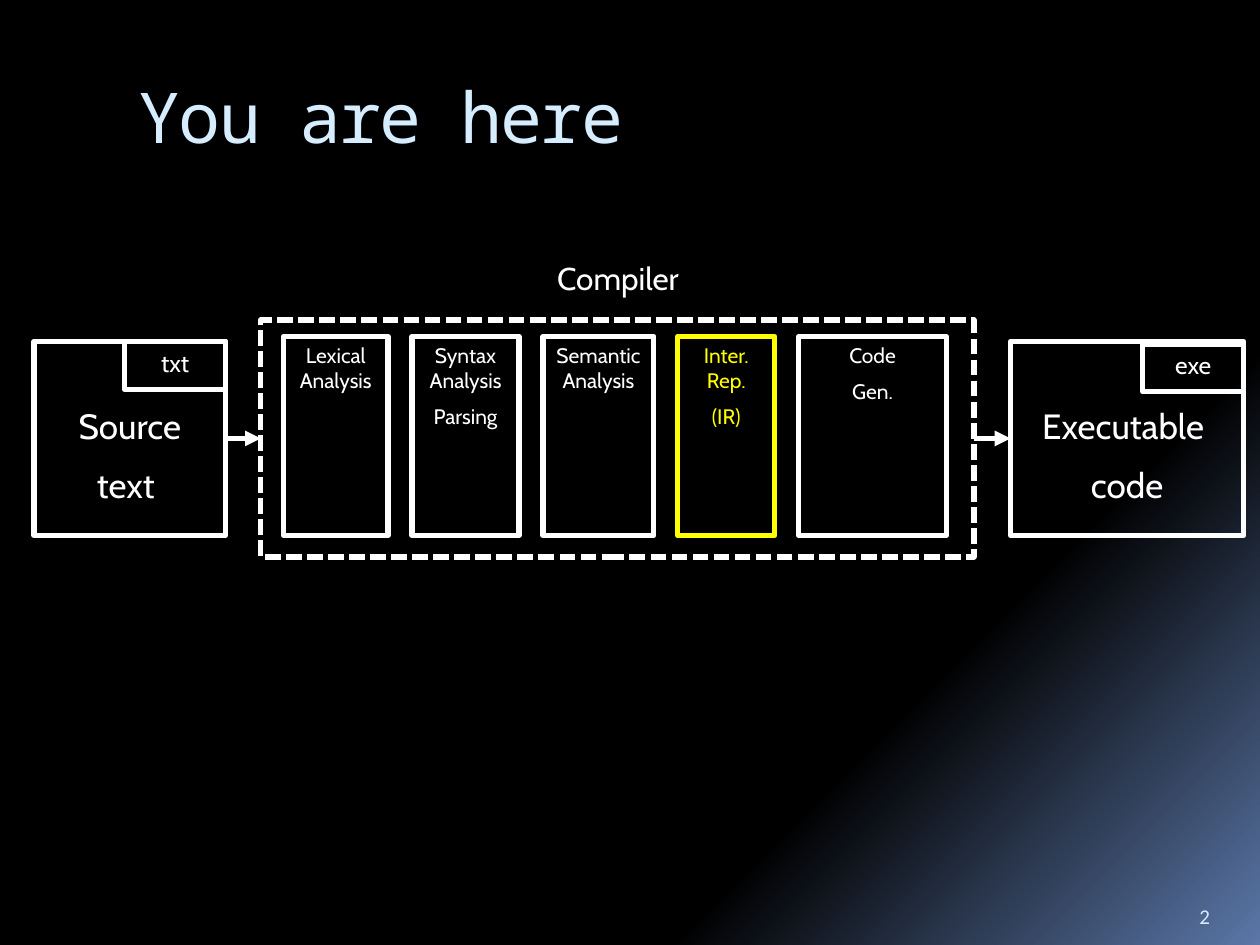
from dataclasses import dataclass

from lxml import etree
from pptx import Presentation
from pptx.dml.color import RGBColor
from pptx.enum.dml import MSO_LINE
from pptx.enum.shapes import MSO_CONNECTOR, MSO_SHAPE
from pptx.enum.text import MSO_ANCHOR, MSO_AUTO_SIZE, PP_ALIGN
from pptx.oxml.ns import qn
from pptx.util import Inches, Pt

RECTANGLE = MSO_SHAPE.RECTANGLE
STRAIGHT = MSO_CONNECTOR.STRAIGHT
DOTTED = MSO_LINE.SQUARE_DOT
LEFT, CENTER = PP_ALIGN.LEFT, PP_ALIGN.CENTER
TOP, BOTTOM = MSO_ANCHOR.TOP, MSO_ANCHOR.BOTTOM
LEFT_SIDE, RIGHT_SIDE = 1, 3

SLIDE_WIDTH, SLIDE_HEIGHT = Inches(10), Inches(7.5)
COLUMNS, ROWS = 100, 75


@dataclass(frozen=True)
class Theme:
    white: RGBColor = RGBColor.from_string("FFFFFF")
    highlight: RGBColor = RGBColor.from_string("FFFF00")
    pale_blue: RGBColor = RGBColor.from_string("D6ECFF")
    black: RGBColor = RGBColor.from_string("000000")
    glow: RGBColor = RGBColor.from_string("5B77A8")
    body_font: str = "Cabin"
    title_font: str = "Noto Sans Mono"
    number_font: str = "Calibri"
    title_size: int = 40
    file_size: int = 20
    heading_size: int = 18
    tag_size: int = 14
    small_size: int = 12
    line_width: int = 3


THEME = Theme()


@dataclass(frozen=True)
class Area:
    column: float
    row: float
    columns: float
    rows: float

    def lengths(self) -> tuple[int, int, int, int]:
        return (
            round(SLIDE_WIDTH * self.column / COLUMNS),
            round(SLIDE_HEIGHT * self.row / ROWS),
            round(SLIDE_WIDTH * self.columns / COLUMNS),
            round(SLIDE_HEIGHT * self.rows / ROWS),
        )


@dataclass(frozen=True)
class Stage:
    text: str
    columns: float
    color: RGBColor = THEME.white


@dataclass(frozen=True)
class File:
    text: str
    extension: str
    area: Area
    tag_drop: float


STAGES = (
    Stage("Lexical\vAnalysis", 8.3),
    Stage("Syntax Analysis\nParsing", 8.5),
    Stage("Semantic\vAnalysis", 8.8),
    Stage("Inter.\vRep.\n(IR)", 7.7, THEME.highlight),
    Stage("Code\nGen.", 11.7),
)
STAGE_LEFT, STAGE_TOP, STAGE_ROWS, STAGE_GAP = 22.5, 26.7, 15.8, 1.9
COMPILER = Area(20.7, 25.4, 56.6, 18.8)
SOURCE = File("Source\ntext ", "txt", Area(2.7, 27.1, 15.2, 15.4), 0)
EXECUTABLE = File("Executable \ncode", "exe", Area(80.2, 27.1, 18.5, 15.4), 0.2)
TAG_COLUMNS, TAG_ROWS = 8, 3.8


def write_text(shape, text: str, *, size: int, color: RGBColor = THEME.white,
               font: str = THEME.body_font, align=CENTER, anchor=TOP,
               top: float = 0.05, side: float = 0.05, tracking: int = 0) -> None:
    frame = shape.text_frame
    frame.text = text
    frame.word_wrap = True
    frame.auto_size = MSO_AUTO_SIZE.NONE
    frame.vertical_anchor = anchor
    frame.margin_left = frame.margin_right = Inches(side)
    frame.margin_top, frame.margin_bottom = Inches(top), Inches(0.05)
    for index, paragraph in enumerate(frame.paragraphs):
        paragraph.alignment = align
        paragraph.space_before = Pt(size / 2 if index else 0)
        for run in paragraph.runs:
            run.font.name = font
            run.font.size = Pt(size)
            run.font.color.rgb = color
            if tracking:
                run.font._element.set("spc", str(tracking))


def add_box(slide, area: Area, color: RGBColor = THEME.white):
    shape = slide.shapes.add_shape(RECTANGLE, *area.lengths())
    shape.shadow.inherit = False
    shape.fill.background()
    shape.line.color.rgb = color
    shape.line.width = Pt(THEME.line_width)
    return shape


def add_label(slide, area: Area, text: str, **text_format) -> None:
    write_text(slide.shapes.add_textbox(*area.lengths()), text, **text_format)


def add_file(slide, file: File):
    box = add_box(slide, file.area)
    write_text(box, file.text, size=THEME.file_size, top=0.5)
    tag_area = Area(file.area.column + file.area.columns - TAG_COLUMNS,
                    file.area.row + file.tag_drop, TAG_COLUMNS, TAG_ROWS)
    write_text(add_box(slide, tag_area), file.extension, size=THEME.tag_size)
    return box


def add_arrow(slide, start, end) -> None:
    arrow = slide.shapes.add_connector(STRAIGHT, 0, 0, 0, 0)
    arrow.begin_connect(start, RIGHT_SIDE)
    arrow.end_connect(end, LEFT_SIDE)
    arrow.line.color.rgb = THEME.white
    arrow.line.width = Pt(THEME.line_width)
    etree.SubElement(arrow.line._get_or_add_ln(), qn("a:tailEnd"), type="triangle")
    etree.SubElement(arrow._element.spPr, qn("a:effectLst"))


def add_stages(slide) -> None:
    column = STAGE_LEFT
    for stage in STAGES:
        area = Area(column, STAGE_TOP, stage.columns, STAGE_ROWS)
        write_text(add_box(slide, area, stage.color), stage.text,
                   size=THEME.small_size, color=stage.color)
        column += stage.columns + STAGE_GAP


def paint_background(slide) -> None:
    fill = slide.background.fill
    fill.gradient()
    fill.gradient_angle = 315
    stops = ((0.73, THEME.black), (1, THEME.glow))
    for stop, (position, color) in zip(fill.gradient_stops, stops):
        stop.position = position
        stop.color.rgb = color


def main() -> None:
    presentation = Presentation()
    presentation.slide_width, presentation.slide_height = SLIDE_WIDTH, SLIDE_HEIGHT
    slide = presentation.slides.add_slide(presentation.slide_layouts[5])
    paint_background(slide)

    title = slide.shapes.title
    title.left, title.top, title.width, title.height = Area(10, 5.6, 85, 10).lengths()
    write_text(title, "You are here", size=THEME.title_size, color=THEME.pale_blue,
               font=THEME.title_font, align=LEFT, top=0.02, side=0.1, tracking=-100)

    executable = add_file(slide, EXECUTABLE)
    source = add_file(slide, SOURCE)
    compiler = add_box(slide, COMPILER)
    compiler.line.dash_style = DOTTED
    add_arrow(slide, source, compiler)
    add_arrow(slide, compiler, executable)
    add_label(slide, Area(37.5, 20.1, 23.1, 5), "Compiler", size=THEME.heading_size)
    add_stages(slide)
    add_label(slide, Area(94.2, 70.2, 5, 4), "2", size=THEME.small_size,
              color=THEME.pale_blue, font=THEME.number_font, align=LEFT,
              anchor=BOTTOM, side=0.1)
    presentation.save("out.pptx")


if __name__ == "__main__":
    main()
